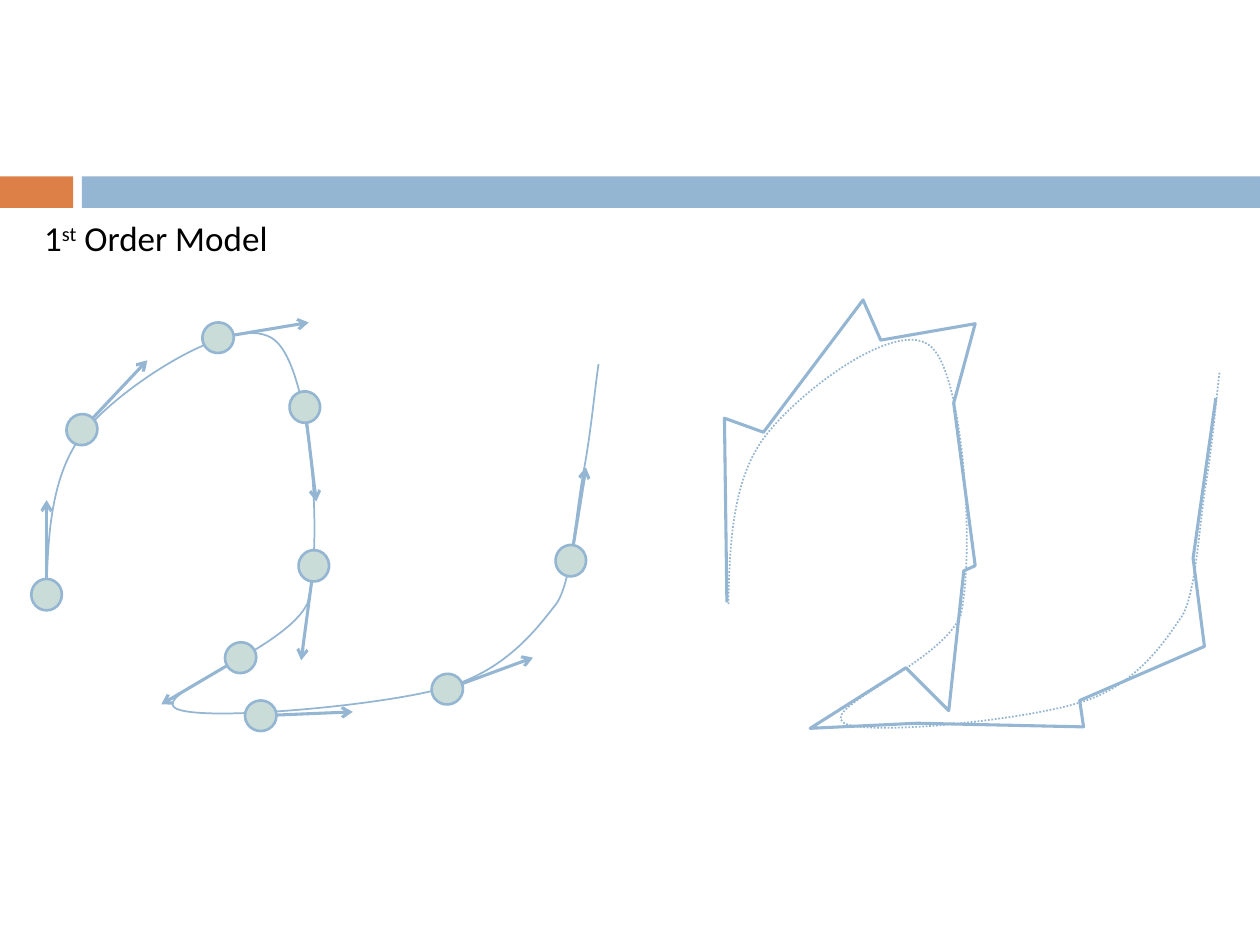
import math

import pptx
import pptx.dml.color
import pptx.enum.dml
import pptx.enum.shapes
import pptx.enum.text
import pptx.oxml
import pptx.oxml.ns
import pptx.util
from lxml import etree

Pt = pptx.util.Pt
qn = pptx.oxml.ns.qn
SHAPE = pptx.enum.shapes.MSO_SHAPE

COLORS = {"blue": "94B6D2", "orange": "DD8047", "ball": "CADCD8", "text": "000000"}
TITLE = [("1", 0), ("st", 30000), (" Order Model", 0)]
BARS = [("orange", 0, 41.8), ("blue", 46.8, 673.2)]
BAR_TOP, BAR_HEIGHT = 100.8, 18
BALL_WIDTH, BALL_HEIGHT = 17.5, 18

CURVE = [
    (26.6, 338.4),
    (27.4, 303.1), (29.5, 267.1), (51.1, 243.4),
    (72.7, 218.9), (136.1, 177.1), (157, 194.4),
    (177.8, 211), (185, 309.6), (175.7, 344.9),
    (162.7, 371.5), (87.1, 396), (100.1, 404.6),
    (112.3, 412.6), (213.1, 403.9), (251.3, 393.8),
    (289.4, 384.5), (308.2, 357.1), (317.5, 345.6),
    (326.9, 333.4), (329, 292.3), (333.4, 270),
    (337.7, 247), (339.1, 229), (342, 208.1),
]
COPY_LEFT, COPY_TOP = 416.2, 180.7
COPY_SCALE_X, COPY_SCALE_Y = 0.89, 1.02

BALLS = [
    ((26.6, 339.8), (26.6, 285.8)),
    ((46.8, 245.5), (84.2, 205.9)),
    ((124.6, 193), (176.4, 184.3)),
    ((174.2, 232.6), (180.7, 286.6)),
    ((179.3, 323.3), (172.1, 377.3)),
    ((137.5, 375.8), (92.2, 402.5)),
    ((149, 409), (201.6, 406.8)),
    ((255.6, 393.8), (304.6, 375.8)),
    ((326.2, 320.4), (334.8, 267.1)),
]

PREDICTION = [
    (415.4, 344.2), (414, 239), (436.3, 247), (493.2, 171.4), (503.3, 194.4),
    (557.3, 185), (545, 230.4), (557.3, 323.3), (550.8, 326.2), (542.2, 406.1),
    (517.7, 381.6), (463, 416.2), (524.2, 413.3), (619.2, 415.4), (617, 400.3),
    (688.3, 369.4), (681.8, 319), (694.8, 227.5),
]


def rgb(name):
    return pptx.dml.color.RGBColor.from_string(COLORS[name])


def set_line(shape, width):
    shape.line.color.rgb = rgb("blue")
    shape.line.width = Pt(width)


def add_filled(shapes, kind, color, left, top, width, height):
    shape = shapes.add_shape(kind, Pt(left), Pt(top), Pt(width), Pt(height))
    shape.shadow.inherit = False
    shape.fill.solid()
    shape.fill.fore_color.rgb = rgb(color)
    return shape


def add_outline(shapes, points, width):
    start, *rest = [(Pt(x), Pt(y)) for x, y in points]
    builder = shapes.build_freeform(*start)
    builder.add_line_segments(rest, close=False)
    shape = builder.convert_to_shape()
    shape.shadow.inherit = False
    shape.fill.background()
    set_line(shape, width)
    return shape


def add_curve(shapes, points):
    shape = add_outline(shapes, points, 1)
    segments = list(shape.element.iter(qn("a:lnTo")))
    for i in range(0, len(segments), 3):
        bezier = etree.Element(qn("a:cubicBezTo"))
        segments[i].addprevious(bezier)
        for segment in segments[i:i + 3]:
            bezier.append(segment[0])
            segment.getparent().remove(segment)
    return shape


def add_arrow(shapes, start, end):
    ends = [Pt(v) for v in (*start, *end)]
    arrow = shapes.add_connector(pptx.enum.shapes.MSO_CONNECTOR.STRAIGHT, *ends)
    set_line(arrow, 1.75)
    props = arrow.element.spPr
    etree.SubElement(props.find(qn("a:ln")), qn("a:tailEnd"), type="arrow")
    etree.SubElement(props, qn("a:effectLst"))


def add_ball(shapes, center, tip):
    x, y = center
    ball = add_filled(shapes, SHAPE.OVAL, "ball", x - BALL_WIDTH / 2,
                      y - BALL_HEIGHT / 2, BALL_WIDTH, BALL_HEIGHT)
    set_line(ball, 1.5)
    ball.rotation = round(math.degrees(math.atan2(tip[0] - x, y - tip[1]))) % 360


def add_title(s):
    title = s.shapes.title
    title.left, title.top, title.width, title.height = map(Pt, (18, 120.2, 144.7, 31.7))
    tf = title.text_frame
    tf.word_wrap = False
    tf.auto_size = pptx.enum.text.MSO_AUTO_SIZE.SHAPE_TO_FIT_TEXT
    tf.vertical_anchor = pptx.enum.text.MSO_ANCHOR.TOP
    p = tf.paragraphs[0]
    p.alignment = pptx.enum.text.PP_ALIGN.LEFT
    for text, baseline in TITLE:
        r = p.add_run()
        r.text = text
        r.font.size = Pt(20)
        r.font.name = "Calibri"
        r.font.color.rgb = rgb("text")
        if baseline:
            r.font._element.set("baseline", str(baseline))


def main():
    prs = pptx.Presentation()
    prs.slide_width, prs.slide_height = Pt(720), Pt(540)
    s = prs.slides.add_slide(prs.slide_layouts[5])

    for color, left, width in BARS:
        bar = add_filled(s.shapes, SHAPE.RECTANGLE, color, left, BAR_TOP, width, BAR_HEIGHT)
        bar.line.fill.background()
    add_title(s)

    motion = s.shapes.add_group_shape().shapes
    add_curve(motion, CURVE)
    for center, tip in BALLS:
        add_arrow(motion, center, tip)
        add_ball(motion, center, tip)

    left = min(x for x, y in CURVE)
    top = min(y for x, y in CURVE)
    copied = [(COPY_LEFT + (x - left) * COPY_SCALE_X, COPY_TOP + (y - top) * COPY_SCALE_Y)
              for x, y in CURVE]
    model = s.shapes.add_group_shape().shapes
    dotted = add_curve(model, copied)
    dotted.line.dash_style = pptx.enum.dml.MSO_LINE.ROUND_DOT
    add_outline(model, PREDICTION, 1.75)

    prs.save("out.pptx")


if __name__ == "__main__":
    main()
